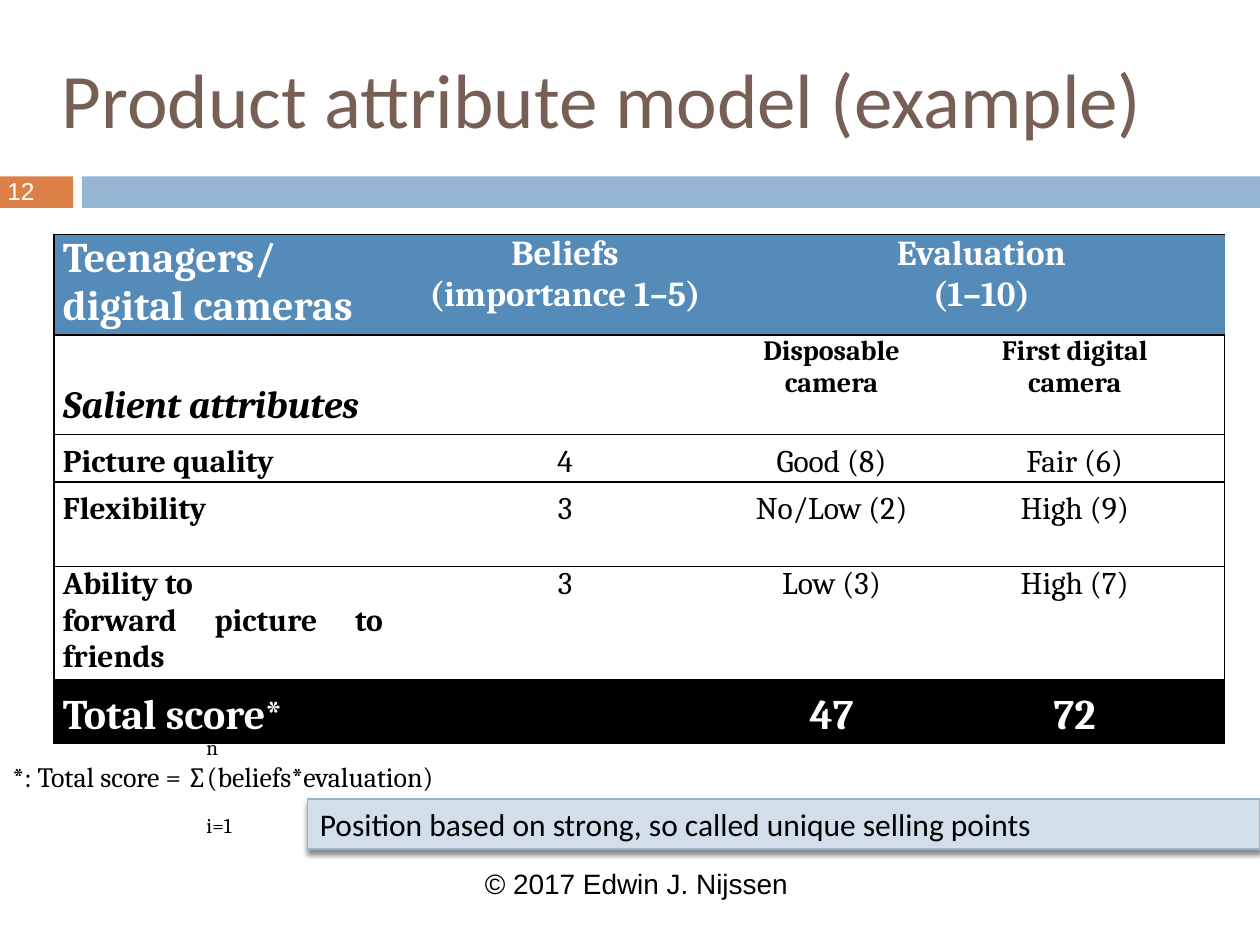
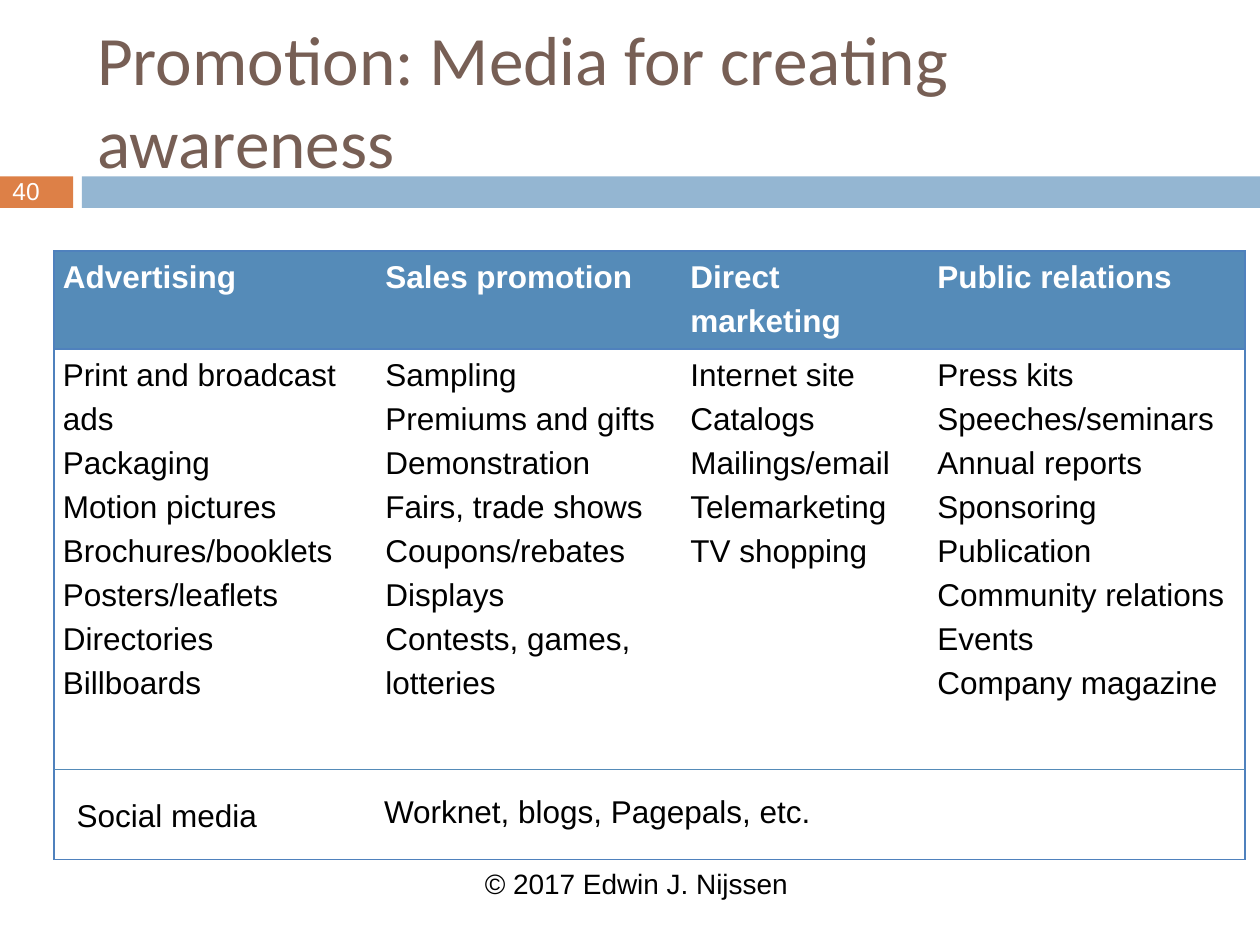
from dataclasses import dataclass

from lxml.etree import SubElement
from pptx import Presentation
from pptx.dml.color import RGBColor
from pptx.enum.shapes import MSO_CONNECTOR, MSO_SHAPE
from pptx.enum.text import MSO_ANCHOR, MSO_AUTO_SIZE, PP_ALIGN
from pptx.oxml.ns import qn
from pptx.util import Inches, Pt


@dataclass(frozen=True)
class Theme:
    title: str = "775F55"
    accent: str = "DD8047"
    band: str = "94B6D2"
    header: str = "558BB8"
    callout: str = "D2DEEA"
    grid: str = "4F81BD"
    black: str = "000000"
    white: str = "FFFFFF"
    sans: str = "Arial"
    heading: str = "Calibri"
    serif: str = "Cambria"
    title_size: float = 44
    long_title_size: float = 39.6
    large: float = 24
    attribute: float = 22
    column: float = 20
    body: float = 18
    note: float = 16
    number: float = 14
    limit: float = 12


THEME = Theme()
CENTER, JUSTIFY = PP_ALIGN.CENTER, PP_ALIGN.JUSTIFY


def set_attributes(target, values):
    for name, value in values.items():
        setattr(target, name, value)


def format_paragraph(paragraph, size, color, font, bold=False, italic=False, **layout):
    set_attributes(paragraph, layout)
    for run in paragraph.runs:
        set_attributes(run.font, {"size": Pt(size), "name": font, "bold": bold, "italic": italic})
        run.font.color.rgb = RGBColor.from_string(color)


def write(frame, text, **format_values):
    """Write one paragraph for each line of text, all in the same format."""
    frame.text = text
    for paragraph in frame.paragraphs:
        format_paragraph(paragraph, **format_values)


def draw_borders(cell, color, first, last):
    """Rule a cell above and below, and at the outer edges of its row."""
    properties = cell._tc.get_or_add_tcPr()
    sides = {"a:lnL": first, "a:lnR": last, "a:lnT": True, "a:lnB": True}
    for index, (tag, visible) in enumerate(sides.items()):
        line = SubElement(properties, qn(tag), w=str(Pt(1)))
        fill = SubElement(line, qn("a:solidFill" if visible else "a:noFill"))
        if visible:
            SubElement(fill, qn("a:srgbClr"), val=color)
        properties.insert(index, line)


class Deck:
    def __init__(self, theme):
        self.theme = theme
        self.presentation = Presentation()
        self.presentation.slide_width = Inches(10)
        self.presentation.slide_height = Inches(7.5)
        self.slide = None

    def add_slide(self, title, title_box, title_size, number, number_left=0):
        theme = self.theme
        self.slide = self.presentation.slides.add_slide(self.presentation.slide_layouts[5])
        placeholder = self.slide.shapes.title
        names = ("left", "top", "width", "height")
        set_attributes(placeholder, dict(zip(names, map(Inches, title_box))))
        set_attributes(placeholder.text_frame, {
            "auto_size": MSO_AUTO_SIZE.NONE, "vertical_anchor": MSO_ANCHOR.MIDDLE, "word_wrap": True})
        write(placeholder.text_frame, title, size=title_size, color=theme.title,
              font=theme.heading, alignment=PP_ALIGN.LEFT)
        self.rectangle((0, 1.4, 0.58, 0.25), theme.accent)
        self.rectangle((0.65, 1.4, 9.35, 0.25), theme.band)
        self.text((number_left, 1.31, 2.92, 0.4), number, anchor=MSO_ANCHOR.MIDDLE,
                  size=theme.number, color=theme.white)
        self.text((3.75, 6.83, 2.76, 0.37), "© 2017 Edwin J. Nijssen", size=theme.note)

    def rectangle(self, box, fill):
        shape = self.slide.shapes.add_shape(MSO_SHAPE.RECTANGLE, *map(Inches, box))
        shape.shadow.inherit = False
        shape.fill.solid()
        shape.fill.fore_color.rgb = RGBColor.from_string(fill)
        shape.line.fill.background()
        return shape

    def text(self, box, text, anchor=MSO_ANCHOR.TOP, **format_values):
        frame = self.slide.shapes.add_textbox(*map(Inches, box)).text_frame
        set_attributes(frame, {"word_wrap": True, "vertical_anchor": anchor})
        defaults = {"size": self.theme.body, "color": self.theme.black, "font": self.theme.sans}
        write(frame, text, **{**defaults, **format_values})
        return frame

    def callout(self, box, text):
        theme = self.theme
        shape = self.rectangle(box, theme.callout)
        shape.line.color.rgb = RGBColor.from_string(theme.band)
        shape.line.width = Pt(0.79)
        effects = shape._element.spPr.find(qn("a:effectLst"))
        shadow = SubElement(effects, qn("a:outerShdw"), blurRad=str(Pt(3)), dist=str(Pt(2.4)),
                            dir="5400000", rotWithShape="0")
        color = SubElement(shadow, qn("a:srgbClr"), val=theme.black)
        SubElement(color, qn("a:alpha"), val="45000")
        write(shape.text_frame, text, size=theme.body, color=theme.black,
              font=theme.heading, alignment=PP_ALIGN.LEFT)

    def rule(self, left, right, top):
        line = self.slide.shapes.add_connector(
            MSO_CONNECTOR.STRAIGHT, Inches(left), Inches(top), Inches(right), Inches(top))
        line.line.color.rgb = RGBColor.from_string(self.theme.header)
        line.line.width = Pt(0.75)
        SubElement(line._element.spPr, qn("a:effectLst"))

    def table(self, left, top, widths, heights, rows, fills, border):
        """Draw a table from rows of (text, format) cells, with one fill or None for each row."""
        table = self.slide.shapes.add_table(
            len(rows), len(widths), Inches(left), Inches(top),
            Inches(sum(widths)), Inches(sum(heights))).table
        table.horz_banding = False
        for column, width in zip(table.columns, widths):
            column.width = Inches(width)
        for row, height, cells, fill in zip(table.rows, heights, rows, fills):
            row.height = Inches(height)
            for index, (cell, (text, format_values)) in enumerate(zip(row.cells, cells)):
                set_attributes(cell, {"margin_left": Inches(0.07), "margin_right": Inches(0.07),
                                      "margin_top": 0, "margin_bottom": 0})
                if fill:
                    cell.fill.solid()
                    cell.fill.fore_color.rgb = RGBColor.from_string(fill)
                else:
                    cell.fill.background()
                write(cell.text_frame, text, **format_values)
                draw_borders(cell, border, index == 0, index == len(widths) - 1)
        return table


def attribute_model_slide(deck):
    theme = deck.theme
    deck.add_slide("Product attribute model (example)", (0.39, 0.27, 9.41, 1.01),
                   theme.title_size, "12", number_left=-0.04)

    def style(size, color=theme.black, **extra):
        return {"size": size, "color": color, "font": theme.serif, **extra}

    def row(texts, label_style, value_style):
        label, *values = texts
        return [(label, {**label_style, "alignment": JUSTIFY, "bold": True})] + [
            (value, {**value_style, "alignment": CENTER}) for value in values]

    plain = style(theme.body)
    spaced = style(theme.body, line_spacing=1.25)
    total = style(theme.large, theme.white, bold=True, line_spacing=1.25)
    rows = [
        row(["Teenagers/ digital cameras", "Beliefs\n(importance 1–5)", "Evaluation\n(1–10)", ""],
            style(theme.large, theme.white), style(theme.column, theme.white, bold=True)),
        row(["Salient attributes", "", "Disposable camera", "First digital\ncamera"],
            style(theme.attribute, italic=True), style(theme.note, bold=True)),
        row(["Picture quality", "4", "Good (8)", "Fair (6)"], spaced, spaced),
        row(["Flexibility", "3", "No/Low (2)", "High (9)"], spaced, spaced),
        row(["Ability to\nforward picture to friends", "3", "Low (3)", "High (7)"], plain, plain),
        row(["Total score*", "", "47", "72"], total, total),
    ]
    table = deck.table(0.43, 1.86, [2.68, 2.75, 1.48, 2.38], [0.77, 0.79, 0.36, 0.67, 0.86, 0.48],
                       rows, [theme.header, None, None, None, None, theme.black], theme.black)
    table.cell(0, 2).merge(table.cell(0, 3))
    table.cell(1, 0).margin_top = Inches(0.39)

    formula = deck.text((0, 5.78, 7.01, 1.58), "n\n*: Total score = ∑(beliefs*evaluation)\ni=1",
                        font=theme.serif, size=theme.note)
    upper_limit, _, lower_limit = formula.paragraphs
    for limit in (upper_limit, lower_limit):
        format_paragraph(limit, **style(theme.limit))
        limit._p.get_or_add_pPr().set("marL", str(Inches(1.54)))
    lower_limit.space_before = Pt(11)
    deck.callout((2.44, 6.34, 7.56, 0.4), "Position based on strong, so called unique selling points")


def promotion_slide(deck):
    theme = deck.theme
    deck.add_slide("Promotion: Media for creating awareness", (0.67, 0.25, 8.92, 1.08),
                   theme.long_title_size, "40")
    media = {
        "Advertising": ["Print and broadcast ads", "Packaging", "Motion pictures",
                        "Brochures/booklets", "Posters/leaflets", "Directories", "Billboards"],
        "Sales promotion": ["Sampling", "Premiums and gifts", "Demonstration",
                            "Fairs, trade shows", "Coupons/rebates", "Displays",
                            "Contests, games, lotteries"],
        "Direct marketing": ["Internet site", "Catalogs", "Mailings/email", "Telemarketing",
                             "TV shopping"],
        "Public relations": ["Press kits", "Speeches/seminars", "Annual reports", "Sponsoring",
                             "Publication", "Community relations", "Events", "Company magazine"],
    }
    body = {"size": theme.body, "color": theme.black, "font": theme.sans, "line_spacing": 1.25}
    header = {**body, "color": theme.white, "bold": True, "alignment": JUSTIFY}
    rows = [[(name, header) for name in media],
            [("\n".join(examples), body) for examples in media.values()]]
    deck.table(0.43, 1.99, [2.56, 2.42, 1.96, 2.51], [0.78, 4.05], rows,
               [theme.header, None], theme.grid)
    deck.rule(0.43, 9.88, 6.11)
    for box, text in [((0.51, 6.19, 2.44, 0.48), "Social media"),
                      ((2.95, 6.16, 4.02, 0.82), "Worknet, blogs, Pagepals, etc.")]:
        deck.text(box, text, alignment=JUSTIFY, line_spacing=1.25)


def main():
    deck = Deck(THEME)
    attribute_model_slide(deck)
    promotion_slide(deck)
    deck.presentation.save("out.pptx")


if __name__ == "__main__":
    main()
